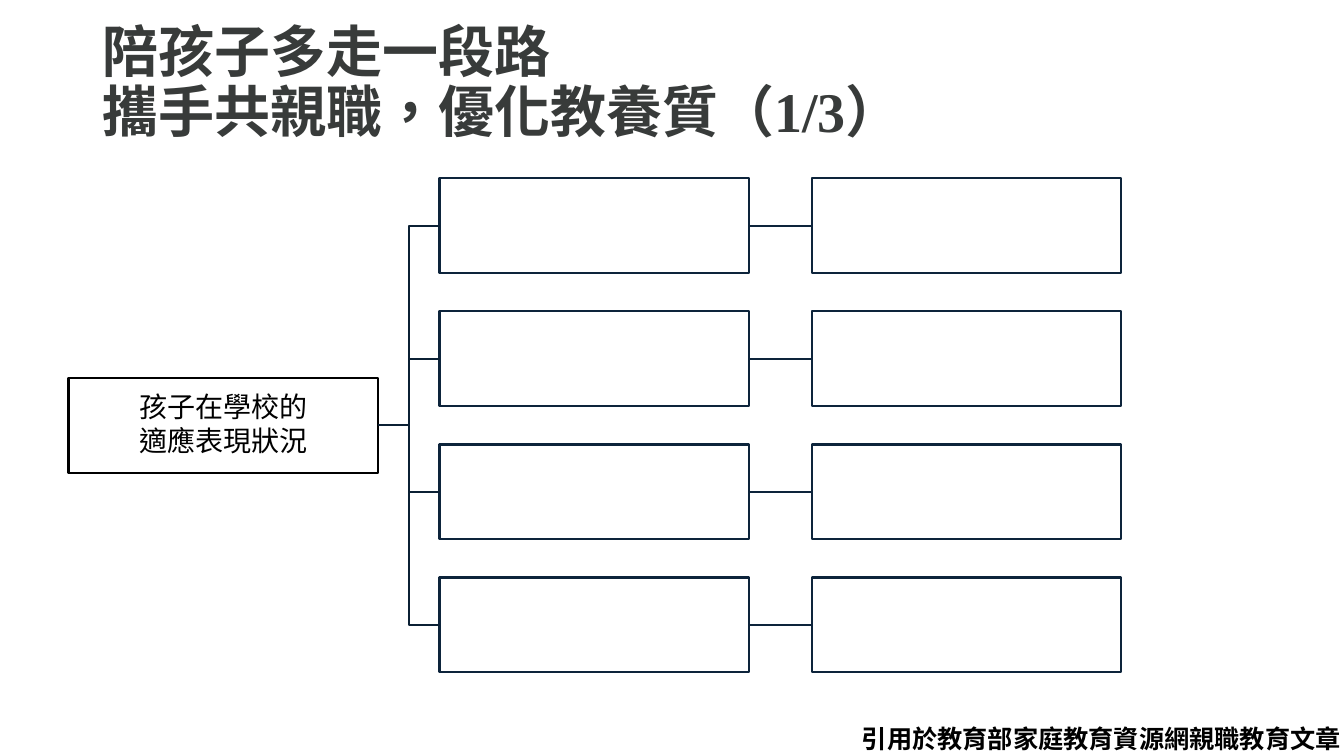
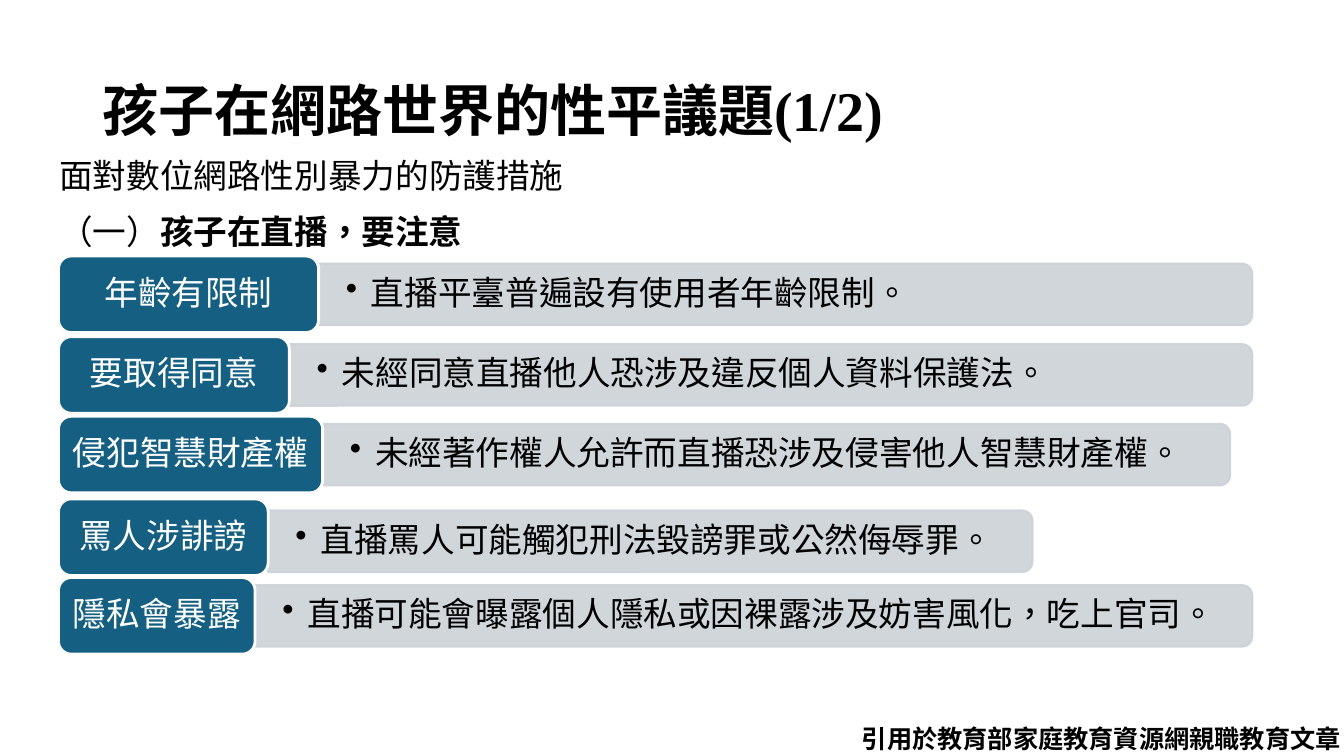
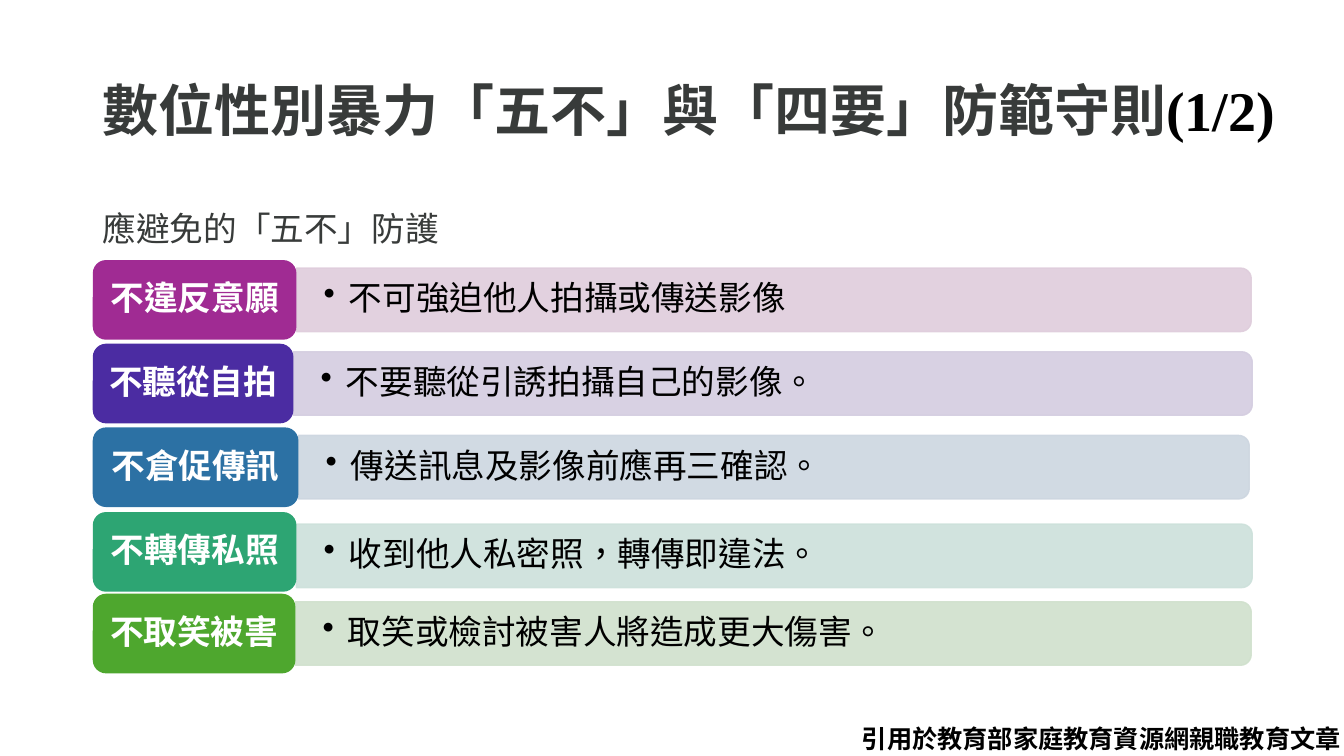
from dataclasses import dataclass

from lxml.etree import SubElement
from pptx import Presentation
from pptx.dml.color import RGBColor
from pptx.enum.lang import MSO_LANGUAGE_ID as Language
from pptx.enum.shapes import MSO_CONNECTOR as Connector, MSO_SHAPE as Preset
from pptx.enum.text import MSO_ANCHOR as Anchor, MSO_AUTO_SIZE as AutoSize, PP_ALIGN as Align
from pptx.oxml.ns import qn
from pptx.util import Inches, Pt


# Shared look
@dataclass(frozen=True)
class Theme:
    latin: str = "Times New Roman"
    cjk: str = "Noto Sans CJK SC"
    black: str = "000000"
    white: str = "FFFFFF"
    charcoal: str = "383B3A"
    navy: str = "0D243B"
    branch: str = "0B2034"
    teal: str = "156082"
    grey: str = "CCD2D8"
    title: int = 40
    body: int = 24
    node: int = 20
    source: int = 18


THEME = Theme()
SOURCE = "引用於教育部家庭教育資源網親職教育文章"


@dataclass(frozen=True)
class Box:
    left: float
    top: float
    width: float
    height: float

    def lengths(self) -> tuple:
        return tuple(Inches(v) for v in (self.left, self.top, self.width, self.height))


@dataclass(frozen=True)
class Span:
    text: str
    bold: bool | None = None
    colour: str | None = None


@dataclass(frozen=True)
class Rule:
    name: str
    advice: str
    top: float
    name_width: float
    bar_width: float
    colour: str = THEME.teal
    tint: str = THEME.grey
    bar_shift: float = 0


@dataclass(frozen=True)
class RuleStyle:
    left: float
    name_height: float
    bar_height: float
    bar_line: float
    bold: bool
    outlined: bool


# Text helpers
def style(paragraph, size: int, colour: str = THEME.black, bold: bool = False,
          latin: str = THEME.cjk) -> None:
    font = paragraph.font
    font.size, font.bold = Pt(size), bold
    font.color.rgb = RGBColor.from_string(colour)
    font.name = latin
    font.language_id = Language.TRADITIONAL_CHINESE
    defaults = paragraph._p.pPr.find(qn("a:defRPr"))
    SubElement(defaults, qn("a:ea"), typeface=THEME.cjk)


def write(paragraph, spans: list[Span]) -> None:
    for span in spans:
        run = paragraph.add_run()
        run.text = span.text
        if span.bold is not None:
            run.font.bold = span.bold
        if span.colour:
            run.font.color.rgb = RGBColor.from_string(span.colour)


def inset(frame, side: float, end: float) -> None:
    frame.margin_left = frame.margin_right = Inches(side)
    frame.margin_top = frame.margin_bottom = Inches(end)


def add_text_frame(slide, box: Box):
    frame = slide.shapes.add_textbox(*box.lengths()).text_frame
    frame.word_wrap = True
    return frame


# Shape helpers
def add_block(slide, preset, box: Box, fill: str, line: str | None, line_width: float = 1.5):
    block = slide.shapes.add_shape(preset, *box.lengths())
    block.shadow.inherit = False
    block.fill.solid()
    block.fill.fore_color.rgb = RGBColor.from_string(fill)
    if line:
        block.line.color.rgb = RGBColor.from_string(line)
        block.line.width = Pt(line_width)
    else:
        block.line.fill.background()
    return block


def set_opacity(block, percent: int) -> None:
    for colour in block._element.spPr.iter(qn("a:srgbClr")):
        SubElement(colour, qn("a:alpha"), val=str(percent * 1000))


def join(slide, kind, start, end, colour: str) -> None:
    link = slide.shapes.add_connector(kind, 0, 0, 0, 0)
    link.begin_connect(start, 3)
    link.end_connect(end, 1)
    link.line.color.rgb = RGBColor.from_string(colour)
    link.line.width = Pt(1.5)
    SubElement(link._element.spPr, qn("a:effectLst"))


# Parts of every slide
def add_page(deck, box: Box, colour: str, heading: list[Span] | str):
    slide = deck.slides.add_slide(deck.slide_layouts[5])
    title = slide.shapes.title
    title.left, title.top, title.width, title.height = box.lengths()
    frame = title.text_frame
    frame.auto_size, frame.vertical_anchor = AutoSize.NONE, Anchor.MIDDLE
    paragraph = frame.paragraphs[0]
    if isinstance(heading, str):
        paragraph.text = heading
    else:
        write(paragraph, heading)
    paragraph.alignment, paragraph.line_spacing = Align.LEFT, 0.9
    style(paragraph, THEME.title, colour, True, THEME.latin)

    credit = add_text_frame(slide, Box(8.45, 7.13, 4.88, 0.37))
    credit.word_wrap = False
    credit.margin_right = 0
    credit.text = SOURCE
    style(credit.paragraphs[0], THEME.source, bold=True)
    return slide


def add_intro(slide, box: Box, colour: str, lines: list[list[Span]]) -> None:
    frame = add_text_frame(slide, box)
    for index, spans in enumerate(lines):
        paragraph = frame.add_paragraph() if index else frame.paragraphs[0]
        write(paragraph, spans)
        paragraph.line_spacing, paragraph.space_before = Pt(30), Pt(10)
        style(paragraph, THEME.body, colour)


# Rows with a name and its advice
def add_rule(slide, rule: Rule, look: RuleStyle) -> None:
    bar_left = look.left + rule.name_width
    middle = rule.top + look.name_height / 2 + rule.bar_shift
    # The bar stands upright before its quarter turn
    upright = Box(bar_left + (rule.bar_width - look.bar_height) / 2,
                  middle - rule.bar_width / 2, look.bar_height, rule.bar_width)
    bar = add_block(slide, Preset.ROUND_2_SAME_RECTANGLE, upright,
                    rule.tint, rule.tint, look.bar_line)
    bar.rotation = 90
    set_opacity(bar, 90)

    advice = add_text_frame(slide, Box(bar_left, middle - look.bar_height / 2,
                                       rule.bar_width, look.bar_height))
    inset(advice, 0.27, 0.14)
    advice.margin_right = Inches(0.1)
    advice.vertical_anchor = Anchor.MIDDLE
    paragraph = advice.paragraphs[0]
    paragraph.text = rule.advice
    properties = paragraph._p.get_or_add_pPr()
    properties.set("marL", str(Inches(0.25)))
    properties.set("indent", str(Inches(-0.25)))
    SubElement(properties, qn("a:buChar"), char="•")
    paragraph.line_spacing = 0.9
    style(paragraph, THEME.body)

    name = add_block(slide, Preset.ROUNDED_RECTANGLE,
                     Box(look.left, rule.top, rule.name_width, look.name_height),
                     rule.colour, THEME.white if look.outlined else None, 2)
    label = name.text_frame
    inset(label, 0.05, 0.05)
    label.vertical_anchor = Anchor.MIDDLE
    paragraph = label.paragraphs[0]
    paragraph.text = rule.name
    paragraph.alignment, paragraph.line_spacing = Align.CENTER, 0.9
    style(paragraph, THEME.body, THEME.white, look.bold)


# Slide 1: tree with four branches
def build_adaptation(deck) -> None:
    slide = add_page(deck, Box(0.92, 0.11, 11.5, 1.45), THEME.charcoal,
                     "陪孩子多走一段路\v攜手共親職，優化教養質（1/3）")
    width, height = 3.07, 0.94
    first_top, row_step, column_left, column_step = 1.77, 1.32, 4.36, 3.69
    root = add_block(slide, Preset.RECTANGLE,
                     Box(column_left - column_step + 0.01, first_top + 1.5 * row_step,
                         width, height), THEME.white, THEME.black)
    frame = root.text_frame
    inset(frame, 0.01, 0.01)
    frame.vertical_anchor = Anchor.MIDDLE
    frame.text = "孩子在學校的\n適應表現狀況"
    for paragraph in frame.paragraphs:
        paragraph.alignment, paragraph.line_spacing = Align.CENTER, 0.9
        paragraph.space_after = Pt(2.5)
        style(paragraph, THEME.node)

    for row in range(4):
        aspect, detail = (
            add_block(slide, Preset.RECTANGLE,
                      Box(column_left + column * column_step, first_top + row * row_step,
                          width, height), THEME.white, THEME.navy)
            for column in range(2))
        join(slide, Connector.ELBOW, root, aspect, THEME.branch)
        join(slide, Connector.STRAIGHT, aspect, detail, THEME.navy)


# Slide 2: cautions for live streaming
def build_streaming(deck) -> None:
    slide = add_page(deck, Box(0.92, 0.4, 11.5, 1.45), THEME.black,
                     "孩子在網路世界的性平議題(1/2)")
    add_intro(slide, Box(0.49, 1.47, 11.5, 1.07), THEME.black, [
        [Span("面對數位網路性別暴力的防護措施")],
        [Span("（一）"), Span("孩子在直播，要注意", bold=True)],
    ])
    look = RuleStyle(0.58, 0.76, 0.61, 1.5, bold=False, outlined=True)
    cautions = [
        Rule("年齡有限制", "直播平臺普遍設有使用者年齡限制。", 2.54, 2.58, 9.26),
        Rule("要取得同意", "未經同意直播他人恐涉及違反個人資料保護法。", 3.34, 2.29, 9.55),
        Rule("侵犯智慧財產權", "未經著作權人允許而直播恐涉及侵害他人智慧財產權。",
             4.13, 2.62, 9),
        Rule("罵人涉誹謗", "直播罵人可能觸犯刑法毀謗罪或公然侮辱罪。",
             4.95, 2.08, 7.58, bar_shift=0.04),
        Rule("隱私會暴露", "直播可能會曝露個人隱私或因裸露涉及妨害風化，吃上官司。",
             5.73, 1.95, 9.89),
    ]
    for caution in cautions:
        add_rule(slide, caution, look)


# Slide 3: the five don'ts
def build_five_donts(deck) -> None:
    slide = add_page(deck, Box(0.92, 0.4, 11.88, 1.45), THEME.charcoal, [
        Span("數位性別暴力「五不」與「四要」防範守則"),
        Span("(1/2)", colour=THEME.black),
    ])
    add_intro(slide, Box(0.92, 2, 11.5, 0.58), THEME.charcoal,
              [[Span("應避免的「五不」防護")]])
    look = RuleStyle(0.92, 0.79, 0.63, 1, bold=True, outlined=False)
    donts = [
        Rule("不違反意願", "不可強迫他人拍攝或傳送影像", 2.58, 2.02, 9.47,
             "A02B93", "DFCDDC"),
        Rule("不聽從自拍", "不要聽從引誘拍攝自己的影像。", 3.41, 1.99, 9.51,
             "4B2CA2", "D4CDE0"),
        Rule("不倉促傳訊", "傳送訊息及影像前應再三確認。", 4.24, 2.04, 9.43,
             "2C71A4", "CDD6E0"),
        Rule("不轉傳私照", "收到他人私密照，轉傳即違法。", 5.08, 2.02, 9.48,
             "2DA573", "CDE1DB", 0.04),
        Rule("不取笑被害", "取笑或檢討被害人將造成更大傷害。", 5.89, 2.01, 9.48,
             "4EA72E", "D0E1CD"),
    ]
    for dont in donts:
        add_rule(slide, dont, look)


def main() -> None:
    deck = Presentation()
    deck.slide_width, deck.slide_height = Inches(13.33), Inches(7.5)
    build_adaptation(deck)
    build_streaming(deck)
    build_five_donts(deck)
    deck.save("out.pptx")


if __name__ == "__main__":
    main()
